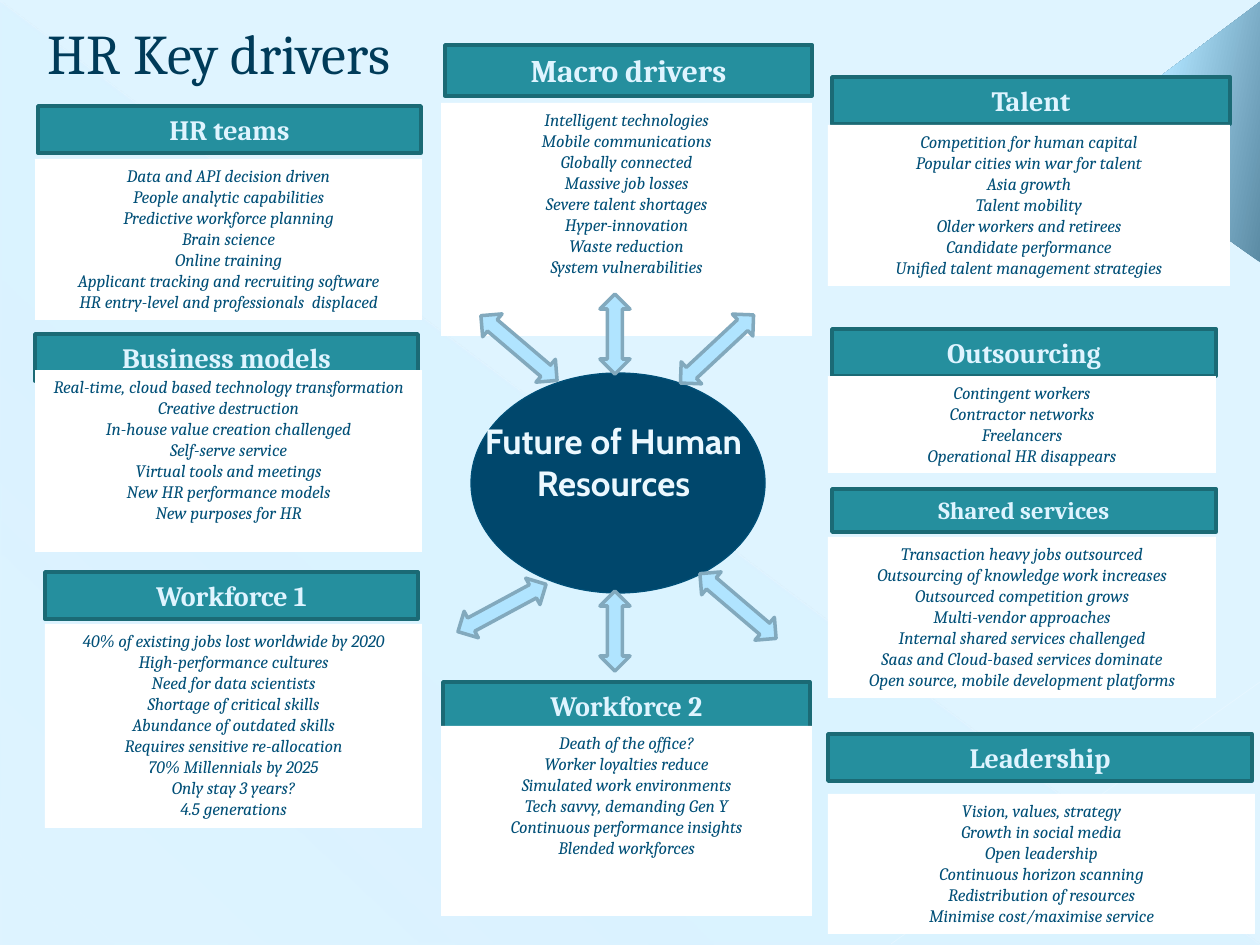
from pptx import Presentation
from pptx.dml.color import RGBColor
from pptx.enum.shapes import MSO_CONNECTOR, MSO_SHAPE
from pptx.enum.text import MSO_ANCHOR, PP_ALIGN
from pptx.oxml import parse_xml
from pptx.oxml.ns import nsdecls, qn
from pptx.util import Emu, Pt

RECTANGLE, OVAL = MSO_SHAPE.RECTANGLE, MSO_SHAPE.OVAL
TRIANGLE, RIGHT_TRIANGLE = MSO_SHAPE.ISOSCELES_TRIANGLE, MSO_SHAPE.RIGHT_TRIANGLE
UP_DOWN, LEFT_RIGHT = MSO_SHAPE.UP_DOWN_ARROW, MSO_SHAPE.LEFT_RIGHT_ARROW
STRAIGHT = MSO_CONNECTOR.STRAIGHT
CENTER, LEFT = PP_ALIGN.CENTER, PP_ALIGN.LEFT
TOP, MIDDLE = MSO_ANCHOR.TOP, MSO_ANCHOR.MIDDLE

SCALE = 914400 / 126
SERIF, SANS = "Cambria", "Cabin"

WHITE = RGBColor(0xFF, 0xFF, 0xFF)
PALE = RGBColor(0xDF, 0xF4, 0xFF)
SKY = RGBColor(0xB0, 0xE4, 0xFF)
LIGHT_SKY = RGBColor(0xCC, 0xED, 0xFF)
STEEL = RGBColor(0x5B, 0x8B, 0xA4)
ARROW_EDGE = RGBColor(0x82, 0xA9, 0xBD)
TEAL = RGBColor(0x25, 0x8F, 0x9E)
TEAL_EDGE = RGBColor(0x1B, 0x6A, 0x75)
NAVY = RGBColor(0x00, 0x3B, 0x59)
OVAL_FILL = RGBColor(0x00, 0x47, 0x6C)
BLUE = RGBColor(0x00, 0x4F, 0x77)
CENTER_TEXT = RGBColor(0xEB, 0xF8, 0xFF)
RAY_LIGHT = RGBColor(0xEE, 0xF9, 0xFF)
RAY_BRIGHT = RGBColor(0xF0, 0xFA, 0xFF)

PANELS = [
    ("Macro drivers", 18, (445, 45, 367, 51), (441, 103, 371, 233), [
        "Intelligent technologies", "Mobile communications", "Globally connected",
        "Massive job losses", "Severe talent shortages", "Hyper-innovation",
        "Waste reduction", "System vulnerabilities"]),
    ("Talent", 16, (832, 77, 398, 47), (828, 125, 402, 161), [
        "Competition for human capital", "Popular cities win war for talent",
        "Asia growth", "Talent mobility", "Older workers and retirees",
        "Candidate performance", "Unified talent management strategies"]),
    ("Outsourcing", 16, (832, 329, 384, 47), (828, 376, 388, 97), [
        "Contingent workers", "Contractor networks", "Freelancers",
        "Operational HR disappears"]),
    ("Shared services", 14, (832, 489, 384, 43), (828, 537, 388, 161), [
        "Transaction heavy jobs outsourced", "Outsourcing of knowledge work increases",
        "Outsourced competition grows", "Multi-vendor approaches",
        "Internal shared services challenged", "Saas and Cloud-based services dominate",
        "Open source, mobile development platforms"]),
    ("Leadership", 16, (828, 734, 424, 47), (828, 794, 427, 140), [
        "Vision, values, strategy", "Growth in social media", "Open leadership",
        "Continuous horizon scanning", "Redistribution of resources",
        "Minimise cost/maximise service"]),
    ("Workforce 2", 16, (443, 682, 367, 47), (441, 726, 371, 190), [
        "Death of the office?", "Worker loyalties reduce", "Simulated work environments",
        "Tech savvy, demanding Gen Y", "Continuous performance insights",
        "Blended workforces"]),
    ("Business models", 16, (35, 334, 383, 47), (35, 370, 387, 182), [
        "Real-time, cloud based technology transformation", "Creative destruction",
        "In-house value creation challenged", "Self-serve service",
        "Virtual tools and meetings", "New HR performance models",
        "New purposes for HR"]),
    ("HR teams", 16, (38, 106, 383, 47), (35, 159, 387, 161), [
        "Data and API decision driven", "People analytic capabilities",
        "Predictive workforce planning", "Brain science", "Online training",
        "Applicant tracking and recruiting software",
        "HR entry-level and professionals  displaced"]),
    ("Workforce 1", 16, (45, 572, 373, 47), (45, 624, 377, 204), [
        "40% of existing jobs lost worldwide by 2020", "High-performance cultures",
        "Need for data scientists", "Shortage of critical skills",
        "Abundance of outdated skills", "Requires sensitive re-allocation",
        "70% Millennials by 2025", "Only stay 3 years?", "4.5 generations"]),
]

ARROWS = [
    (UP_DOWN, (600, 294, 30, 80), 0),
    (LEFT_RIGHT, (667, 334, 100, 30), 137),
    (LEFT_RIGHT, (469, 333, 100, 30), 220.4),
    (UP_DOWN, (600, 591, 30, 80), 0),
    (LEFT_RIGHT, (688, 591, 100, 30), 220.4),
    (LEFT_RIGHT, (452, 593, 100, 30), 151.7),
]


def px(*lengths):
    """Turn pixel lengths into EMU."""
    return [Emu(round(length * SCALE)) for length in lengths]


def write_text(box, lines, size, color, font=SERIF, bold=False, italic=False,
               align=CENTER, anchor=TOP):
    """Fill a box with one formatted paragraph per line."""
    frame = box.text_frame
    frame.word_wrap = True
    frame.vertical_anchor = anchor
    for index, line in enumerate(lines):
        para = frame.add_paragraph() if index else frame.paragraphs[0]
        para.alignment = align
        span = para.add_run()
        span.text = line
        span.font.name, span.font.size = font, Pt(size)
        span.font.bold, span.font.italic = bold, italic
        span.font.color.rgb = color


def add_text(page, frame, lines, **style):
    """Add a text box with formatted lines."""
    write_text(page.shapes.add_textbox(*px(*frame)), lines, **style)


def add_block(parent, kind, frame, fill=None, edge=None, width=2, rotation=0):
    """Add a preset shape with a plain fill and an optional outline."""
    block = parent.shapes.add_shape(kind, *px(*frame))
    block.shadow.inherit = False
    block.rotation = rotation
    if fill is None:
        block.fill.background()
    else:
        block.fill.solid()
        block.fill.fore_color.rgb = fill
    if edge is None:
        block.line.fill.background()
    else:
        block.line.color.rgb = edge
        block.line.width = Pt(width)
    return block


def set_gradient(block, stops, angle):
    """Give an unfilled block a linear gradient of (position, colour, opacity) stops."""
    marks = "".join(
        f'<a:gs pos="{place * 1000}"><a:srgbClr val="{color}">'
        f'<a:alpha val="{opacity * 1000}"/></a:srgbClr></a:gs>'
        for place, color, opacity in stops)
    gradient = parse_xml(
        f'<a:gradFill {nsdecls("a")} rotWithShape="1"><a:gsLst>{marks}</a:gsLst>'
        f'<a:lin ang="{angle * 60000}" scaled="0"/></a:gradFill>')
    properties = block._element.spPr
    properties.replace(properties.find(qn("a:noFill")), gradient)


def add_ray(page, ends, color, width, opacity):
    """Add a thin translucent background line."""
    ray = page.shapes.add_connector(STRAIGHT, *px(*ends))
    ray.line.color.rgb = color
    ray.line.width = Pt(width)
    properties = ray._element.spPr
    tint = properties.find(".//" + qn("a:srgbClr"))
    tint.append(parse_xml(f'<a:alpha {nsdecls("a")} val="{opacity * 1000}"/>'))
    properties.append(parse_xml(f'<a:effectLst {nsdecls("a")}/>'))


def add_backdrop(page):
    """Add the background colour, glow, rays and corner triangle."""
    page.background.fill.solid()
    page.background.fill.fore_color.rgb = PALE
    glow = add_block(page, RIGHT_TRIANGLE, (1, 2, 1259, 943))
    set_gradient(glow, [(0, SKY, 10), (70, SKY, 8), (100, SKY, 1)], 133)
    add_ray(page, (0, 1, 1259, 944), RAY_LIGHT, 0.39, 35)
    add_ray(page, (1260, 682, 891, 944), RAY_BRIGHT, 0.47, 45)
    corner = add_block(page, TRIANGLE, (1041, 43, 261, 178), rotation=90)
    corner.adjustments[0] = 0.51
    corner._element.spPr.xfrm.set("flipV", "1")
    set_gradient(corner, [(0, STEEL, 100), (60, SKY, 100), (100, LIGHT_SKY, 100)], 258)


def add_panel(page, heading, size, header_frame, body_frame, lines):
    """Add a grouped heading bar and white list."""
    group = page.shapes.add_group_shape()
    header = add_block(group, RECTANGLE, header_frame, TEAL, TEAL_EDGE)
    write_text(header, [heading], size, PALE, bold=True)
    body = add_block(group, RECTANGLE, body_frame, WHITE)
    write_text(body, lines, 10, BLUE, italic=True)


def main():
    """Build the slide and save it."""
    deck = Presentation()
    deck.slide_width, deck.slide_height = px(1260, 945)
    page = deck.slides.add_slide(deck.slide_layouts[6])
    add_backdrop(page)
    add_text(page, (35, 0, 1154, 105), ["HR Key drivers"], size=32, color=NAVY,
             align=LEFT, anchor=MIDDLE)
    add_block(page, OVAL, (471, 373, 294, 220), OVAL_FILL, BLUE, 0.75)
    add_text(page, (471, 413, 285, 140), ["Future of Human Resources"], size=20,
             color=CENTER_TEXT, font=SANS, bold=True)
    for panel in PANELS:
        add_panel(page, *panel)
    for kind, frame, rotation in ARROWS:
        add_block(page, kind, frame, SKY, ARROW_EDGE, rotation=rotation)
    deck.save("out.pptx")


if __name__ == "__main__":
    main()
